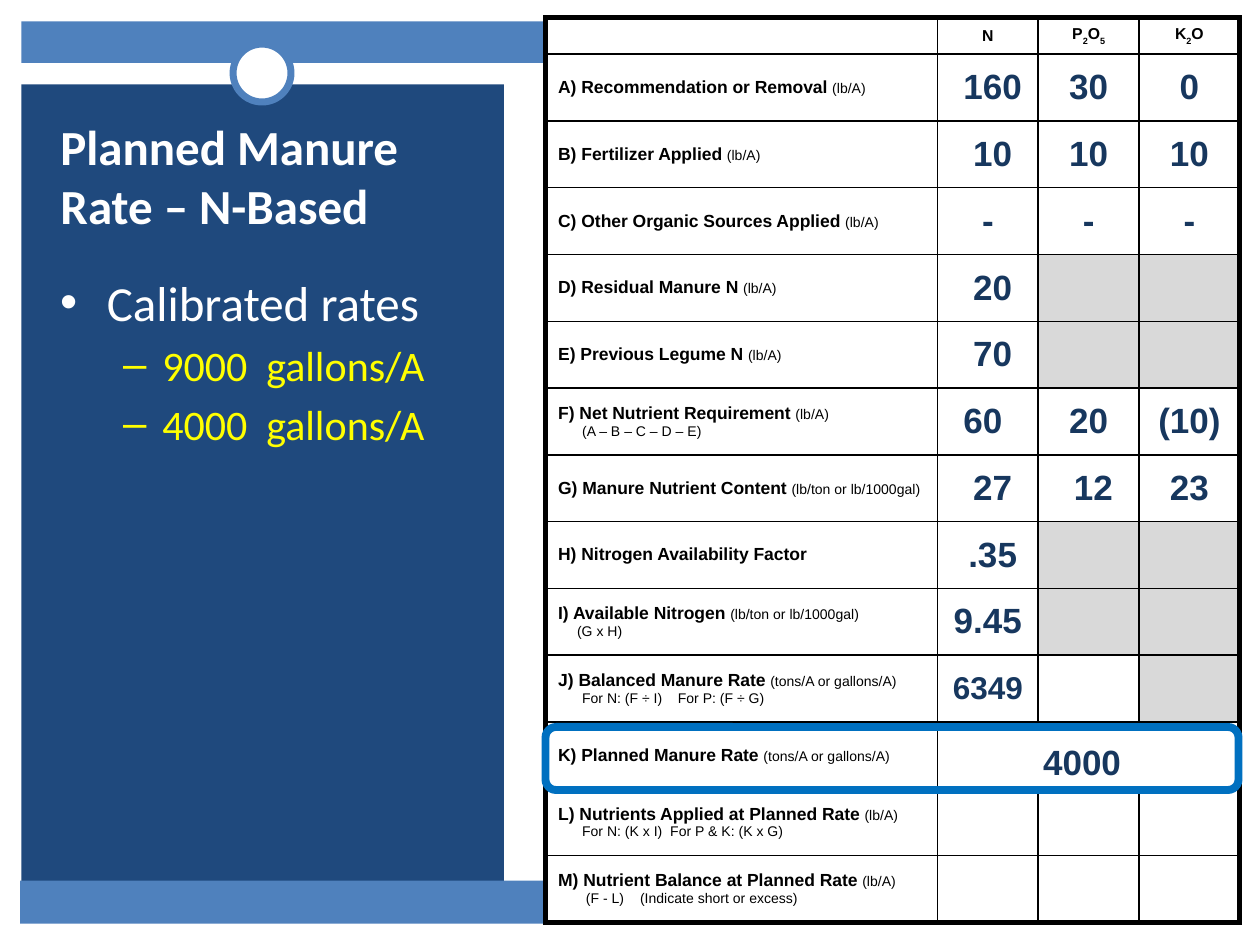
"""Build the slide on the N-based planned manure rate with its nutrient worksheet."""
from lxml import etree
from pptx import Presentation
from pptx import util as u
from pptx.dml.color import RGBColor
from pptx.enum import shapes, text
from pptx.oxml import ns

WHITE = RGBColor(0xFF, 0xFF, 0xFF)
BLACK = RGBColor(0, 0, 0)
BAND_BLUE = RGBColor(0x4F, 0x81, 0xBD)
PANEL_BLUE = RGBColor(0x1F, 0x49, 0x7D)
VALUE_BLUE = RGBColor(0x17, 0x37, 0x5E)
HIGHLIGHT_BLUE = RGBColor(0x00, 0x70, 0xC0)
YELLOW = RGBColor(0xFF, 0xFF, 0x00)
GREY = RGBColor(0xD9, 0xD9, 0xD9)

HEADERS = ["", "N", "P2O5", "K2O"]
RATE_UNIT = "(tons/A or gallons/A)"
CONTENT_UNIT = "(lb/ton or lb/1000gal)"
# Each row: label, unit, formula, formula tab stops, values (None is a grey cell)
ROWS = [
    ("A) Recommendation or Removal ", "(lb/A)", "", [], [" 160", "30", "0"]),
    ("B) Fertilizer Applied ", "(lb/A)", "", [], [" 10", "10", "10"]),
    ("C) Other Organic Sources Applied ", "(lb/A)", "", [], ["-", "-", "-"]),
    ("D) Residual Manure N ", "(lb/A)", "", [], [" 20", None, None]),
    ("E) Previous Legume N ", "(lb/A)", "", [], [" 70", None, None]),
    ("F) Net Nutrient Requirement ", "(lb/A)", "\t(A – B – C – D – E)", [0.19], ["60 ", "20", "(10)"]),
    ("G) Manure Nutrient Content ", CONTENT_UNIT, "", [], [" 27", " 12", "23"]),
    ("H) Nitrogen Availability Factor", "", "", [], [" .35", None, None]),
    ("I) Available Nitrogen ", CONTENT_UNIT, "\t(G x H)", [0.15], ["9.45 ", None, None]),
    ("J) Balanced Manure Rate ", RATE_UNIT, "\tFor N: (F ÷ I)\tFor P: (F ÷ G)", [0.19, 0.95], ["6349", "", None]),
    ("K) Planned Manure Rate ", RATE_UNIT, "", [], ["", "", ""]),
    ("L) Nutrients Applied at Planned Rate ", "(lb/A)", "\tFor N: (K x I)  For P & K: (K x G)", [0.19], ["", "", ""]),
    ("M) Nutrient Balance at Planned Rate ", "(lb/A)", "\t(F - L)\t(Indicate short or excess)", [0.22, 0.65], ["", "", ""]),
]
PLANNED_ROW = 11


def set_font(font, name, size, color, bold=False):
    font.name, font.size, font.bold = name, u.Pt(size), bold
    font.color.rgb = color


def add_plain_shape(kind, left, top, width, height, fill=None, line=None, weight=0):
    shape = page.shapes.add_shape(kind, u.Inches(left), u.Inches(top), u.Inches(width), u.Inches(height))
    shape.shadow.inherit = False
    if fill is None:
        shape.fill.background()
    else:
        shape.fill.solid()
        shape.fill.fore_color.rgb = fill
    if line is None:
        shape.line.fill.background()
    else:
        shape.line.color.rgb = line
        shape.line.width = u.Pt(weight)


deck = Presentation()
deck.slide_width, deck.slide_height = u.Inches(10), u.Inches(7.5)
page = deck.slides.add_slide(deck.slide_layouts[5])

RECTANGLE = shapes.MSO_SHAPE.RECTANGLE
add_plain_shape(RECTANGLE, 0.17, 0.17, 9.66, 0.33, BAND_BLUE)
add_plain_shape(RECTANGLE, 0.17, 0.67, 3.83, 6.42, PANEL_BLUE)
add_plain_shape(shapes.MSO_SHAPE.OVAL, 1.85, 0.35, 0.46, 0.46, WHITE, BAND_BLUE, 4)
add_plain_shape(RECTANGLE, 0.16, 6.99, 9.66, 0.34, BAND_BLUE)

title = page.shapes.title
title.element.getparent().append(title.element)
title.left, title.top, title.width, title.height = (u.Inches(n) for n in (0.38, 0.85, 3.32, 1.08))
title.text_frame.text = "Planned Manure Rate – N-Based"
title.text_frame.word_wrap = True
title.text_frame.auto_size = text.MSO_AUTO_SIZE.NONE
title.text_frame.vertical_anchor = text.MSO_ANCHOR.MIDDLE
para = title.text_frame.paragraphs[0]
para.alignment = text.PP_ALIGN.LEFT
set_font(para.font, "Calibri", 28, WHITE, True)

rates = page.shapes.add_textbox(u.Inches(0.38), u.Inches(2.11), u.Inches(3.4), u.Inches(4.87)).text_frame
rates.word_wrap = True
rates.text = "Calibrated rates\n9000  gallons/A\n4000  gallons/A"
for para in rates.paragraphs:
    if para is not None and para.text == "Calibrated rates":
        level, size, color, margin, hang, mark = 0, 28, WHITE, 0.37, 0.37, "•"
    else:
        level, size, color, margin, hang, mark = 1, 24, YELLOW, 0.81, 0.31, "–"
    para.level = level
    para.space_before = u.Pt(size * 0.2)
    properties = para._p.get_or_add_pPr()
    properties.set("marL", str(u.Inches(margin)))
    properties.set("indent", str(-u.Inches(hang)))
    etree.SubElement(properties, ns.qn("a:buFont"), typeface="Arial")
    etree.SubElement(properties, ns.qn("a:buChar"), char=mark)
    set_font(para.font, "Calibri", size, color)

row_count = len(ROWS) + 1
table = page.shapes.add_table(
    row_count, 4, u.Inches(4.33), u.Inches(0.14), u.Inches(5.5), u.Inches(7.2)).table
table.first_row = table.horz_banding = False
for column, width in zip(table.columns, [3.11, 0.8, 0.8, 0.8]):
    column.width = u.Inches(width)
for index, row in enumerate(table.rows):
    row.height = u.Inches(0.53 if index else 0.29)

for r in range(row_count):
    for c in range(4):
        cell = table.cell(r, c)
        cell.vertical_anchor = text.MSO_ANCHOR.MIDDLE
        outer = {"lnL": c == 0, "lnR": c == 3 or (r == PLANNED_ROW and c == 1),
                 "lnT": r == 0, "lnB": r == row_count - 1}
        for side, is_outer in outer.items():
            edge = etree.SubElement(cell._tc.get_or_add_tcPr(), ns.qn(f"a:{side}"), w=str(u.Pt(3 if is_outer else 1)))
            paint = etree.SubElement(edge, ns.qn("a:solidFill"))
            etree.SubElement(paint, ns.qn("a:srgbClr"), val=str(BLACK))
        value = ROWS[r - 1][4][c - 1] if r and c else ""
        cell.fill.solid()
        cell.fill.fore_color.rgb = GREY if value is None else WHITE
        para = cell.text_frame.paragraphs[0]
        if r == 0:
            cell.margin_top = cell.margin_bottom = 0
            para.alignment = text.PP_ALIGN.CENTER
            set_font(para.font, "Arial", 9, BLACK, True)
            for letter in HEADERS[c]:
                span = para.add_run()
                span.text = letter
                set_font(span.font, "Arial", 9, BLACK, True)
                if letter.isdigit():
                    span._r.get_or_add_rPr().set("baseline", "-30000")
        elif c == 0:
            label, unit, formula, stops, _ = ROWS[r - 1]
            for words, size, bold in ((label, 10, True), (unit, 8, False)):
                if words:
                    span = para.add_run()
                    span.text = words
                    set_font(span.font, "Arial", size, BLACK, bold)
            if formula:
                para = cell.text_frame.add_paragraph()
                para.text = formula
                tabs = etree.SubElement(para._p.get_or_add_pPr(), ns.qn("a:tabLst"))
                for stop in stops:
                    etree.SubElement(tabs, ns.qn("a:tab"), pos=str(u.Inches(stop)), algn="l")
                set_font(para.font, "Arial", 8, BLACK)
        elif value:
            para.text = value
            para.alignment = text.PP_ALIGN.CENTER
            set_font(para.font, "Arial", 18 if value == "6349" else 20, VALUE_BLUE, True)
table.cell(PLANNED_ROW, 1).merge(table.cell(PLANNED_ROW, 3))

add_plain_shape(shapes.MSO_SHAPE.ROUNDED_RECTANGLE, 4.33, 5.77, 5.5, 0.5, line=HIGHLIGHT_BLUE, weight=4.5)
planned = page.shapes.add_textbox(u.Inches(8.18), u.Inches(5.83), u.Inches(1.32), u.Inches(0.44)).text_frame
planned.word_wrap = True
planned.text = "4000"
set_font(planned.paragraphs[0].font, "Arial", 20, VALUE_BLUE, True)

deck.save("out.pptx")
